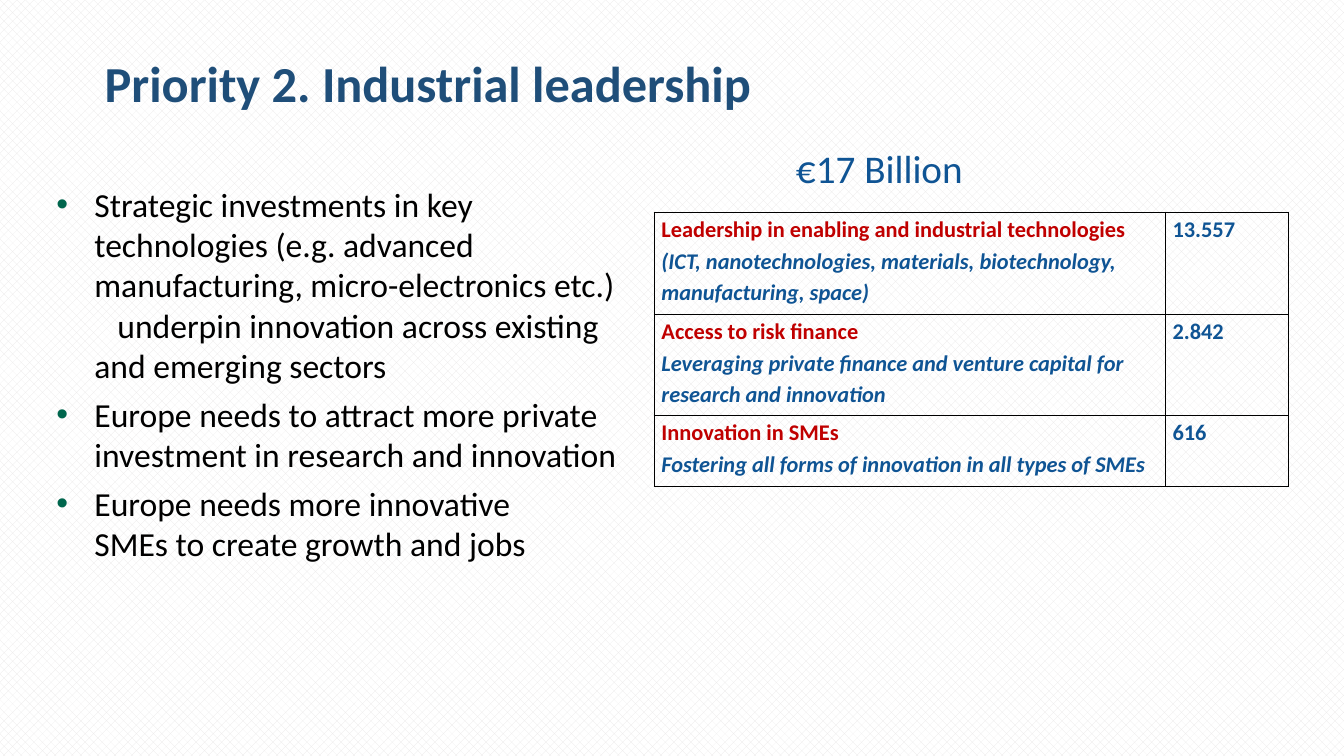
"""Build the slide on industrial leadership and its budget table."""
from dataclasses import dataclass

from lxml.etree import SubElement
from pptx import Presentation
from pptx.dml.color import RGBColor
from pptx.enum.dml import MSO_PATTERN
from pptx.enum.text import MSO_ANCHOR as Anchor
from pptx.oxml.ns import qn
from pptx.slide import Slide
from pptx.table import _Cell as Cell
from pptx.text.text import TextFrame, _Paragraph as Paragraph
from pptx.util import Cm, Pt

NAVY = RGBColor(0x1F, 0x4E, 0x79)
BLUE = RGBColor(0x0F, 0x54, 0x94)
RED = RGBColor(0xC0, 0x00, 0x00)
GREEN = RGBColor(0x00, 0x66, 0x4D)
BLACK = RGBColor(0x00, 0x00, 0x00)
WHITE = RGBColor(0xFF, 0xFF, 0xFF)
GREY = RGBColor(0xE9, 0xE7, 0xE7)
FONT = "Calibri"


@dataclass
class Budget:
    area: str
    detail: str
    amount: str
    height: float


BULLETS = [
    "Strategic investments in key technologies (e.g. advanced manufacturing, "
    "micro-electronics etc.)\v\tunderpin innovation across existing and emerging sectors",
    "Europe needs to attract more private investment in research and innovation",
    "Europe needs more innovative\vSMEs to create growth and jobs",
]
BUDGETS = [
    Budget("Leadership in enabling and industrial technologies",
           "(ICT, nanotechnologies, materials, biotechnology, manufacturing, space)",
           "13.557", 2.57),
    Budget("Access to risk finance",
           "Leveraging private finance and venture capital for research and innovation",
           "2.842", 2.55),
    Budget("Innovation in SMEs",
           "Fostering all forms of innovation in all types of SMEs", "616", 1.8),
]


def add_text(tf: TextFrame, text: str, *, size: float, color: RGBColor,
             bold: bool = False, italic: bool = False, spacing: float = 1.0,
             before: float = 0, bullet: bool = False) -> None:
    """Fill the empty first paragraph, or append one, with formatted text."""
    first = not tf.text
    p = tf.paragraphs[0] if first else tf.add_paragraph()
    p.text = text
    p.line_spacing = spacing
    p.space_before = Pt(0 if first else before)
    if bullet:
        add_bullet(p)
    for r in p.runs:
        f = r.font
        f.name, f.size, f.bold, f.italic = FONT, Pt(size), bold, italic
        f.color.rgb = color


def add_bullet(p: Paragraph) -> None:
    """Give a paragraph a green bullet, a hanging indent and a tab stop."""
    pr = p._p.get_or_add_pPr()
    pr.set("marL", str(Cm(1.11)))
    pr.set("indent", str(-Cm(0.96)))
    SubElement(SubElement(pr, qn("a:buClr")), qn("a:srgbClr"), val=str(GREEN))
    SubElement(pr, qn("a:buFont"), typeface="Arial")
    SubElement(pr, qn("a:buChar"), char="•")
    tabs = SubElement(pr, qn("a:tabLst"))
    SubElement(tabs, qn("a:tab"), pos=str(Cm(1.69)), algn="l")


def add_box(s: Slide, left: float, top: float, width: float, height: float,
            wrap: bool = True, anchor: Anchor = Anchor.TOP) -> TextFrame:
    """Add a text box and return its text frame."""
    tf = s.shapes.add_textbox(Cm(left), Cm(top), Cm(width), Cm(height)).text_frame
    tf.word_wrap, tf.vertical_anchor = wrap, anchor
    return tf


def style_cell(cell: Cell) -> None:
    """Give a cell thin black borders, narrow margins and no fill."""
    cell.margin_left = cell.margin_right = Cm(0.18)
    cell.margin_top = cell.margin_bottom = Cm(0)
    pr = cell._tc.get_or_add_tcPr()
    for side in ("lnL", "lnR", "lnT", "lnB"):
        ln = SubElement(pr, qn(f"a:{side}"), w=str(Pt(1)))
        SubElement(SubElement(ln, qn("a:solidFill")), qn("a:srgbClr"), val=str(BLACK))
    cell.fill.background()


def add_budget_table(s: Slide) -> None:
    """Draw one table row per budget."""
    height = sum(b.height for b in BUDGETS)
    table = s.shapes.add_table(len(BUDGETS), 2, Cm(16.49), Cm(5.35),
                               Cm(15.98), Cm(height)).table
    table.first_row = table.horz_banding = False
    table.columns[0].width, table.columns[1].width = Cm(12.88), Cm(3.1)
    for row, b in zip(table.rows, BUDGETS):
        row.height = Cm(b.height)
        for cell in row.cells:
            style_cell(cell)
        label, amount = (cell.text_frame for cell in row.cells)
        add_text(label, b.area, size=16, color=RED, bold=True, spacing=1.15)
        add_text(label, b.detail, size=16, color=BLUE, bold=True, italic=True, spacing=1.15)
        add_text(amount, b.amount, size=16, color=BLUE, bold=True, spacing=1.15)


def main() -> None:
    """Build and save the slide."""
    prs = Presentation()
    prs.slide_width, prs.slide_height = Cm(33.87), Cm(19.05)
    s = prs.slides.add_slide(prs.slide_layouts[6])
    fill = s.background.fill
    fill.patterned()
    fill.pattern = MSO_PATTERN.from_xml("pct40")
    fill.fore_color.rgb, fill.back_color.rgb = GREY, WHITE

    add_text(add_box(s, 2.39, 1.02, 21.9, 2.1, anchor=Anchor.MIDDLE),
             "Priority 2. Industrial leadership", size=36, color=NAVY, bold=True)
    add_text(add_box(s, 19.81, 3.5, 4.78, 1.45, wrap=False),
             "€17 Billion", size=28, color=BLUE)
    points = add_box(s, 1.02, 4.5, 14.99, 11.4)
    for text in BULLETS:
        add_text(points, text, size=24, color=BLACK, before=6, bullet=True)
    add_budget_table(s)
    prs.save("out.pptx")


if __name__ == "__main__":
    main()
